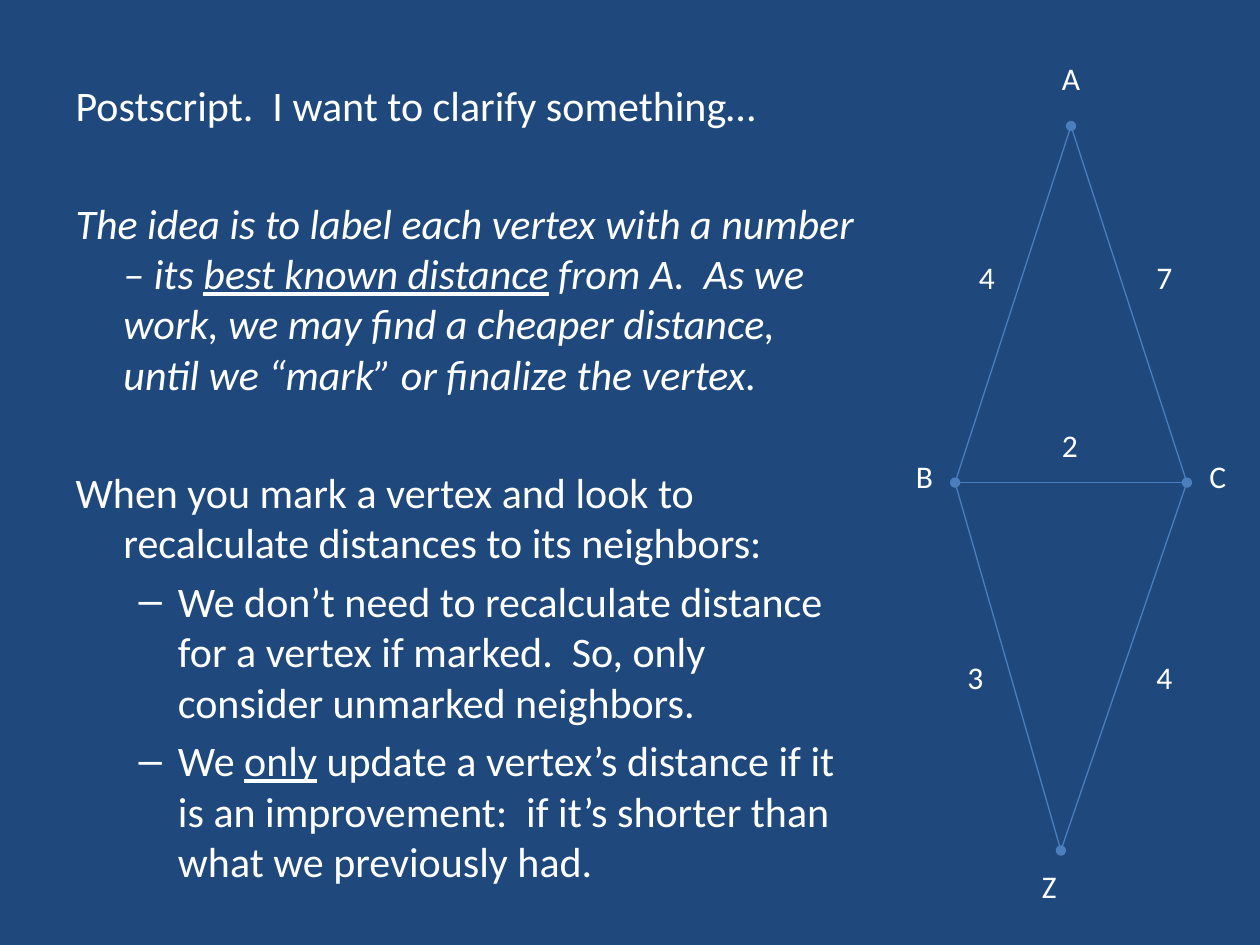
from lxml import etree
from pptx import Presentation
from pptx.dml.color import RGBColor
from pptx.enum.shapes import MSO_CONNECTOR
from pptx.enum.text import MSO_AUTO_SIZE
from pptx.oxml.ns import qn
from pptx.util import Inches, Pt

STRAIGHT = MSO_CONNECTOR.STRAIGHT
NO_AUTOFIT = MSO_AUTO_SIZE.NONE
GROW = MSO_AUTO_SIZE.SHAPE_TO_FIT_TEXT

FONT = "Calibri"
COLORS = {"background": "1F497D", "text": "FFFFFF", "edge": "4B7EBC"}

# (level, italic, space before in points or None, [(text, underlined), ...])
SECTION_GAP = 38.5
PARAGRAPHS = [
    (0, False, None, [("Postscript.  I want to clarify something…", False)]),
    (0, True, SECTION_GAP, [
        ("The idea is to label each vertex with a number – its ", False),
        ("best known distance", True),
        (" from A.  As we work, we may find a cheaper distance, "
         "until we “mark” or finalize the vertex.", False)]),
    (0, False, SECTION_GAP, [
        ("When you mark a vertex and look to recalculate distances "
         "to its neighbors:", False)]),
    (1, False, None, [
        ("We don’t need to recalculate distance for a vertex if marked.  "
         "So, only consider unmarked neighbors.", False)]),
    (1, False, None, [
        ("We ", False), ("only", True),
        (" update a vertex’s distance if it is an improvement:  "
         "if it’s shorter than what we previously had.", False)]),
]

VERTICES = {"A": (8.5, 1), "B": (7.58, 3.83), "C": (9.42, 3.83), "Z": (8.42, 6.75)}

# (from, to, line ends that carry a vertex dot)
EDGES = [
    ("A", "B", ("headEnd", "tailEnd")),
    ("A", "C", ("tailEnd",)),
    ("B", "Z", ("tailEnd",)),
    ("C", "Z", ()),
    ("B", "C", ()),
]

# (text, left, top, width)
LABELS = [
    ("4", 7.67, 2, 0.33),
    ("7", 9.08, 2, 0.33),
    ("3", 7.58, 5.17, 0.33),
    ("4", 9.08, 5.17, 0.42),
    ("2", 8.33, 3.33, 0.42),
    ("A", 8.33, 0.42, 0.42),
    ("B", 7.17, 3.58, 0.25),
    ("C", 9.5, 3.58, 0.33),
    ("Z", 8.17, 6.83, 0.67),
]
LABEL_HEIGHT = 0.51


def color(name):
    return RGBColor.from_string(COLORS[name])


def format_run(run, size):
    run.font.name = FONT
    run.font.size = Pt(size)
    run.font.color.rgb = color("text")


def remove_bullet(paragraph):
    """Drop the bullet but keep the hanging indent."""
    properties = paragraph._p.get_or_add_pPr()
    properties.set("marL", str(Inches(0.38)))
    properties.set("indent", str(Inches(-0.38)))
    etree.SubElement(properties, qn("a:buNone"))


def fill_body(body):
    body.left, body.top = Inches(0.5), Inches(0.58)
    body.width, body.height = Inches(6.42), Inches(6.67)
    text_frame = body.text_frame
    text_frame.auto_size = NO_AUTOFIT
    for index, (level, italic, gap, pieces) in enumerate(PARAGRAPHS):
        paragraph = text_frame.add_paragraph() if index else text_frame.paragraphs[0]
        paragraph.level = level
        if gap:
            paragraph.space_before = Pt(gap)
        if level == 0:
            remove_bullet(paragraph)
        for text, underlined in pieces:
            run = paragraph.add_run()
            run.text = text
            format_run(run, 24)
            run.font.italic = italic
            run.font.underline = underlined


def add_edge(slide, start, end, dotted_ends):
    points = [Inches(value) for value in VERTICES[start] + VERTICES[end]]
    edge = slide.shapes.add_connector(STRAIGHT, *points)
    edge.line.color.rgb = color("edge")
    edge.line.width = Pt(0.75)
    line = edge.line._get_or_add_ln()
    for line_end in dotted_ends:
        etree.SubElement(line, qn(f"a:{line_end}"), type="oval")
    etree.SubElement(edge._element.spPr, qn("a:effectLst"))


def add_label(slide, text, left, top, width):
    box = slide.shapes.add_textbox(
        Inches(left), Inches(top), Inches(width), Inches(LABEL_HEIGHT))
    text_frame = box.text_frame
    text_frame.word_wrap = True
    text_frame.auto_size = GROW
    text_frame.text = text
    format_run(text_frame.paragraphs[0].runs[0], 18)


def main():
    presentation = Presentation()
    presentation.slide_width, presentation.slide_height = Inches(10), Inches(7.5)
    slide = presentation.slides.add_slide(presentation.slide_layouts[1])
    slide.background.fill.solid()
    slide.background.fill.fore_color.rgb = color("background")

    title = slide.shapes.title._element
    title.getparent().remove(title)
    fill_body(slide.placeholders[1])
    for edge in EDGES:
        add_edge(slide, *edge)
    for label in LABELS:
        add_label(slide, *label)
    presentation.save("out.pptx")


if __name__ == "__main__":
    main()
